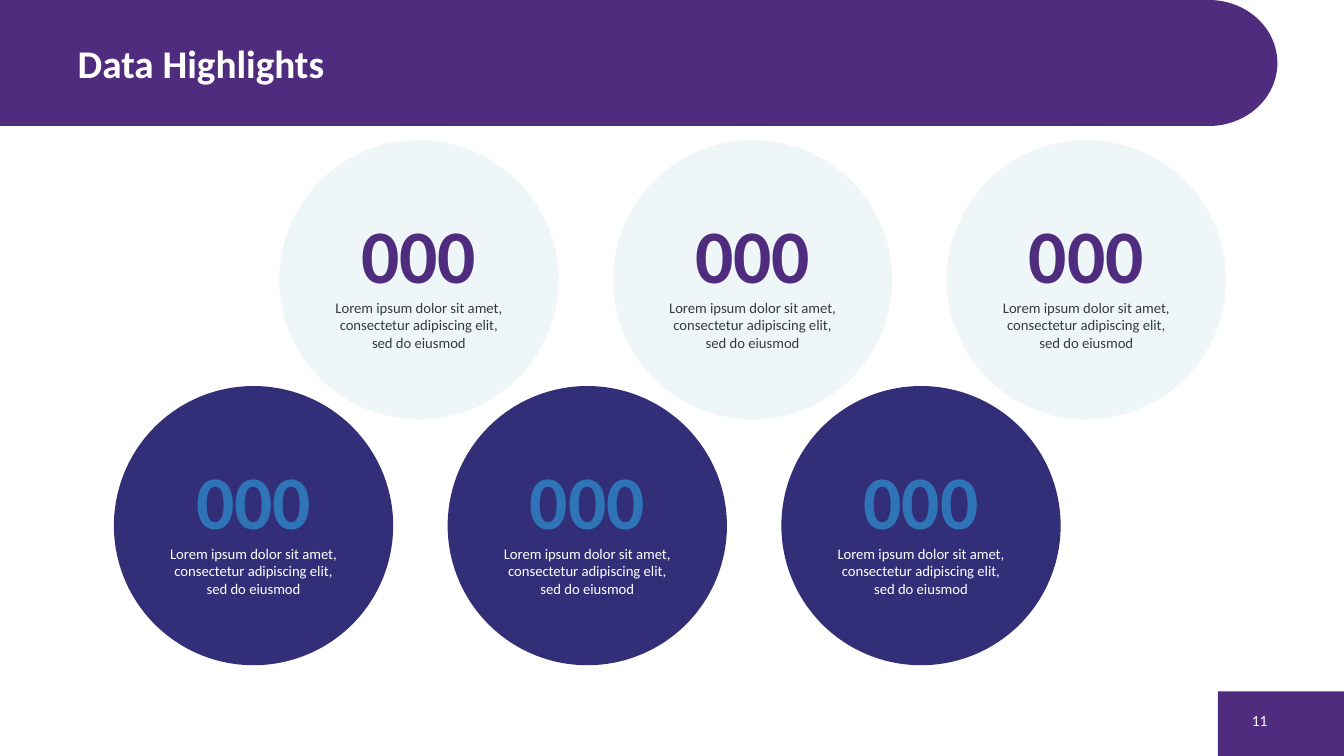
from pptx import Presentation
from pptx.dml.color import RGBColor
from pptx.enum.shapes import MSO_SHAPE as Kind
from pptx.enum.text import MSO_ANCHOR as Anchor, PP_ALIGN as Align
from pptx.util import Inches, Pt

PURPLE = RGBColor(0x50, 0x2C, 0x7F)
NAVY = RGBColor(0x32, 0x2E, 0x78)
BLUE = RGBColor(0x2F, 0x74, 0xB7)
PALE = RGBColor(0xEF, 0xF6, 0xF7)
GREY = RGBColor(0x3A, 0x3A, 0x3A)
WHITE = RGBColor(0xFF, 0xFF, 0xFF)

FONT = "Calibri"
NUMBER = "000"
DETAIL = "Lorem ipsum dolor sit amet, consectetur adipiscing elit, sed do eiusmod"
SIZE = 2.77  # circle diameter
STEP = 3.31  # distance between circles in a row

# Left, top, fill, number colour, detail colour of each row
ROWS = [
    (2.77, 1.39, PALE, PURPLE, GREY),
    (1.13, 3.83, NAVY, BLUE, WHITE),
]


def put_text(para, text, size, color, bold=False, align=Align.LEFT):
    para.alignment = align
    run = para.add_run()
    run.text = text
    font = run.font
    font.name = FONT
    font.size = Pt(size)
    font.bold = bold
    font.color.rgb = color


def add_block(slide, kind, left, top, width, height, fill):
    block = slide.shapes.add_shape(
        kind, Inches(left), Inches(top), Inches(width), Inches(height))
    block.shadow.inherit = False
    block.fill.solid()
    block.fill.fore_color.rgb = fill
    block.line.fill.background()
    return block


def add_circle(slide, left, top, fill, num_color, text_color):
    frame = add_block(slide, Kind.OVAL, left, top, SIZE, SIZE, fill).text_frame
    frame.word_wrap = True
    frame.vertical_anchor = Anchor.MIDDLE
    put_text(frame.paragraphs[0], NUMBER, 54, num_color, bold=True,
             align=Align.CENTER)
    put_text(frame.add_paragraph(), DETAIL, 10.5, text_color,
             align=Align.CENTER)


def set_title(slide, text):
    title = slide.shapes.title
    title.left, title.top = Inches(0.67), Inches(0.08)
    title.width, title.height = Inches(10), Inches(1.08)
    frame = title.text_frame
    frame.vertical_anchor = Anchor.MIDDLE
    put_text(frame.paragraphs[0], text, 28, WHITE, bold=True)
    # Bring the title in front of the banner
    title.element.getparent().append(title.element)


def add_page(slide, text):
    box = slide.shapes.add_textbox(
        Inches(12.17), Inches(6.95), Inches(0.5), Inches(0.4))
    frame = box.text_frame
    frame.word_wrap = True
    frame.vertical_anchor = Anchor.MIDDLE
    put_text(frame.paragraphs[0], text, 11, WHITE, align=Align.RIGHT)


def main():
    deck = Presentation()
    deck.slide_width, deck.slide_height = Inches(13.33), Inches(7.5)
    slide = deck.slides.add_slide(deck.slide_layouts[5])

    # Page corner and rounded banner
    add_block(slide, Kind.RECTANGLE, 12.08, 6.86, 1.25, 0.64, PURPLE)
    add_block(slide, Kind.RECTANGLE, 0, 0, 11.99, 1.25, PURPLE)
    add_block(slide, Kind.OVAL, 11.31, 0, 1.36, 1.25, PURPLE)

    # Title and page number
    set_title(slide, "Data Highlights")
    add_page(slide, "11")

    # Two rows of three circles
    for left, top, *colors in ROWS:
        for col in range(3):
            add_circle(slide, left + col * STEP, top, *colors)

    deck.save("out.pptx")


if __name__ == "__main__":
    main()
